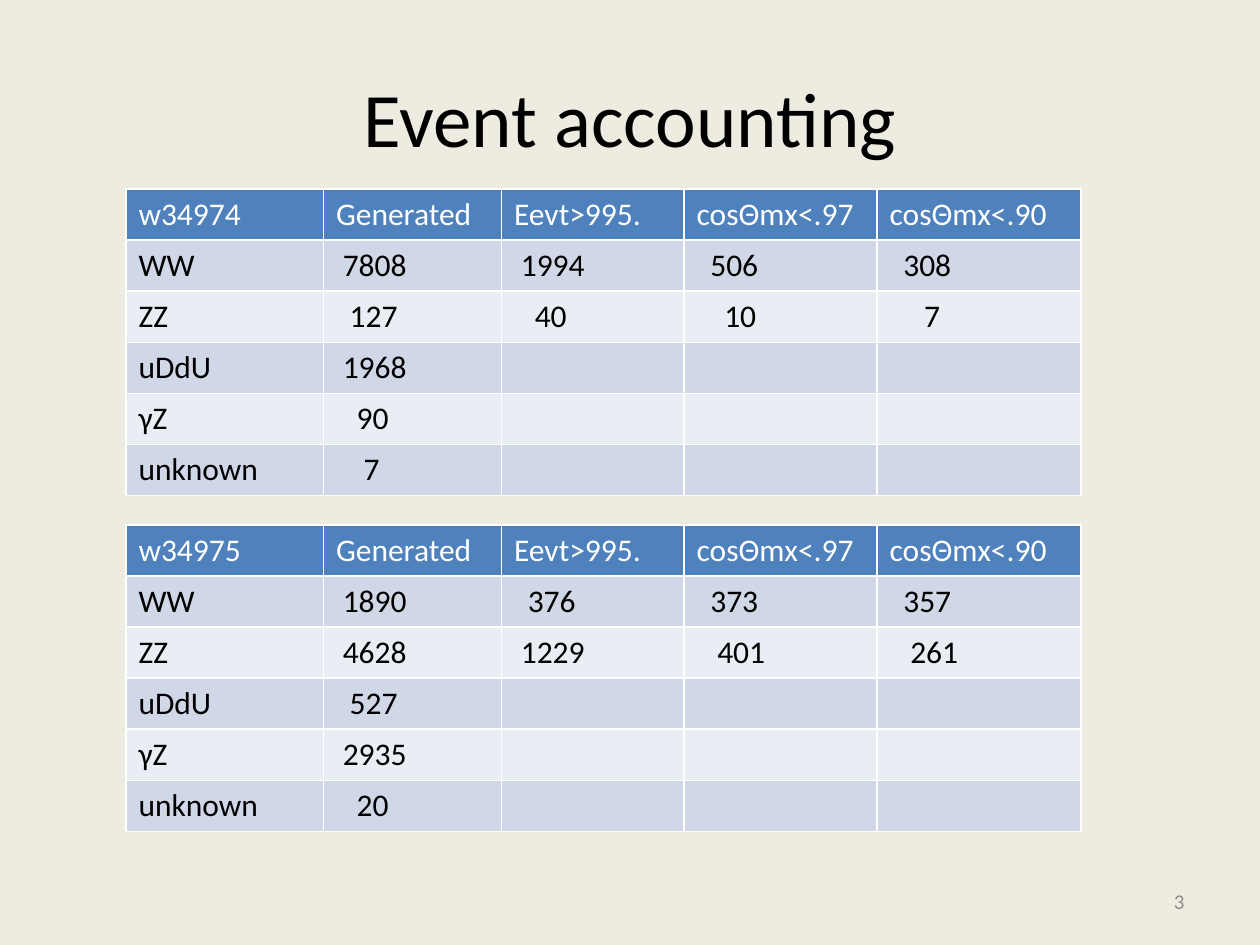
"""Build the event accounting slide with one table per run."""
from pptx import Presentation
from pptx import util as u
from pptx.dml import color
from pptx.enum import text

COLORS = {
    "background": "EEECE1", "header": "4F81BD", "odd": "D0D8E8", "even": "E9EDF4",
    "white": "FFFFFF", "black": "000000", "number": "8C8C8C",
}
HEADINGS = ["Generated", "Eevt>995.", "cosΘmx<.97", "cosΘmx<.90"]
COLUMN_WIDTHS = [3.98, 3.59, 3.68, 3.89, 4.11]
ROW_HEIGHT = 1.03
INDENT_STEP = 0.14
RUNS = [
    ("w34974", 3.81, [
        ["WW", "7808", "1994", "506", "308"],
        ["ZZ", "127", "40", "10", "7"],
        ["uDdU", "1968"],
        ["γZ", "90"],
        ["unknown", "7"],
    ]),
    ("w34975", 10.58, [
        ["WW", "1890", "376", "373", "357"],
        ["ZZ", "4628", "1229", "401", "261"],
        ["uDdU", "527"],
        ["γZ", "2935"],
        ["unknown", "20"],
    ]),
]


def rgb(name):
    return color.RGBColor.from_string(COLORS[name])


def format_text(paragraph, size, color_name):
    for run in paragraph.runs:
        run.font.name = "Calibri"
        run.font.size = u.Pt(size)
        run.font.bold = False
        run.font.color.rgb = rgb(color_name)


presentation = Presentation()
presentation.slide_width = u.Cm(25.4)
presentation.slide_height = u.Cm(19.05)
slide = presentation.slides.add_slide(presentation.slide_layouts[5])
slide.background.fill.solid()
slide.background.fill.fore_color.rgb = rgb("background")

title = slide.shapes.title
title.left, title.top = u.Cm(1.27), u.Cm(0.76)
title.width, title.height = u.Cm(22.86), u.Cm(3.18)
title.text_frame.text = "Event accounting"
title.text_frame.vertical_anchor = text.MSO_ANCHOR.MIDDLE
title_paragraph = title.text_frame.paragraphs[0]
title_paragraph.alignment = text.PP_ALIGN.CENTER
format_text(title_paragraph, 44, "black")

for run_name, top, events in RUNS:
    rows = [[run_name] + HEADINGS] + events
    table = slide.shapes.add_table(
        len(rows), len(COLUMN_WIDTHS), u.Cm(2.54), u.Cm(top),
        u.Cm(sum(COLUMN_WIDTHS)), u.Cm(ROW_HEIGHT * len(rows)),
    ).table
    for column, width in zip(table.columns, COLUMN_WIDTHS):
        column.width = u.Cm(width)
    for row_index, values in enumerate(rows):
        table.rows[row_index].height = u.Cm(ROW_HEIGHT)
        band = "header" if row_index == 0 else ("even", "odd")[row_index % 2]
        for column_index in range(len(COLUMN_WIDTHS)):
            cell = table.cell(row_index, column_index)
            cell.fill.solid()
            cell.fill.fore_color.rgb = rgb(band)
            if column_index >= len(values):
                continue
            value = values[column_index]
            cell.text_frame.text = value
            if row_index > 0 and column_index > 0:
                extra_step = values[0] == "ZZ" and column_index > 2
                steps = 5 - len(value) + extra_step
                cell.margin_left = u.Cm(0.25 + INDENT_STEP * steps)
            format_text(cell.text_frame.paragraphs[0], 18,
                        "white" if row_index == 0 else "black")

number_box = slide.shapes.add_textbox(u.Cm(18.2), u.Cm(17.66), u.Cm(5.93), u.Cm(1.01))
number_box.text_frame.word_wrap = True
number_box.text_frame.vertical_anchor = text.MSO_ANCHOR.MIDDLE
number_box.text_frame.text = "3"
number_paragraph = number_box.text_frame.paragraphs[0]
number_paragraph.alignment = text.PP_ALIGN.RIGHT
format_text(number_paragraph, 12, "number")

presentation.save("out.pptx")
